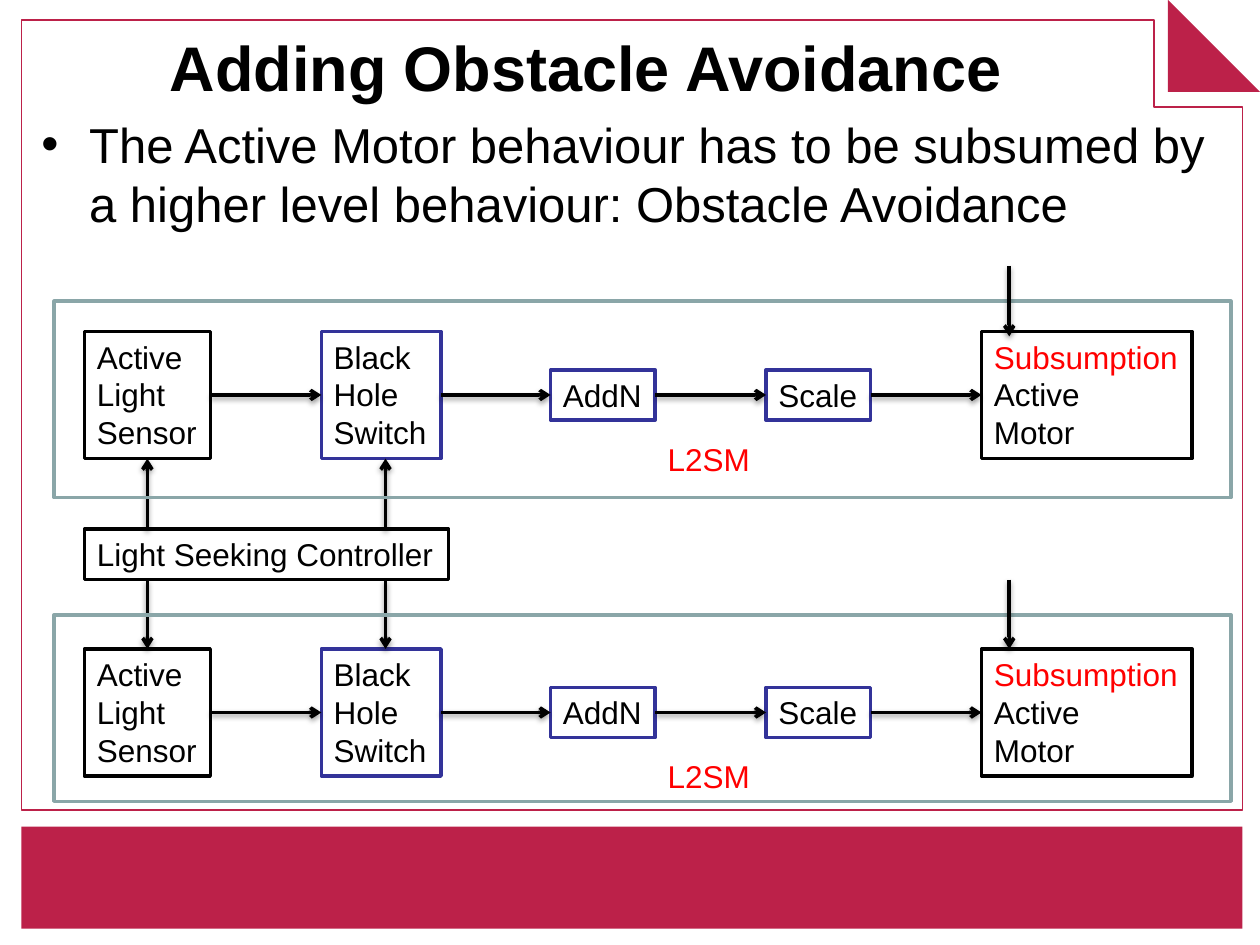
from lxml import etree
from pptx import Presentation
from pptx.dml.color import RGBColor
from pptx.enum import shapes, text
from pptx.oxml import parse_xml
from pptx.oxml.ns import nsdecls, qn
from pptx.util import Inches, Pt


class Theme:
    font = "Arial"
    title, body, label = 36, 28, 18
    thin, thick = 0.75, 2
    white, black = "FFFFFF", "000000"
    crimson, navy, grey, red = "BC2149", "333399", "8AA6A8", "FF0000"


prs = Presentation()
prs.slide_width, prs.slide_height = Inches(10), Inches(7.5)
s = prs.slides.add_slide(prs.slide_layouts[6])


def add_box(content, x, y, w, h, kind=shapes.MSO_SHAPE.RECTANGLE, fill=None, line=None,
            size=Theme.label, color=Theme.black, first_color=None, bold=False,
            align=text.PP_ALIGN.LEFT, anchor=text.MSO_ANCHOR.TOP, wrap=False):
    place = [Inches(v) for v in (x, y, w, h)]
    if fill or line:
        sp = s.shapes.add_shape(kind, *place)
        sp.shadow.inherit = False
    else:
        sp = s.shapes.add_textbox(*place)
    if fill:
        sp.fill.solid()
        sp.fill.fore_color.rgb = RGBColor.from_string(fill)
    else:
        sp.fill.background()
    if line:
        sp.line.color.rgb = RGBColor.from_string(line)
        sp.line.width = Pt(Theme.thick)
    else:
        sp.line.fill.background()
    if not content:
        return sp
    tf = sp.text_frame
    tf.word_wrap = wrap
    tf.auto_size = text.MSO_AUTO_SIZE.NONE if wrap else text.MSO_AUTO_SIZE.SHAPE_TO_FIT_TEXT
    tf.vertical_anchor = anchor
    for i, words in enumerate(content.split("\n")):
        p = tf.paragraphs[0] if i == 0 else tf.add_paragraph()
        p.alignment = align
        r = p.add_run()
        r.text = words
        r.font.name, r.font.size, r.font.bold = Theme.font, Pt(size), bold
        r.font.color.rgb = RGBColor.from_string(first_color if first_color and i == 0 else color)
    return sp


def add_arrow(x1, y1, x2, y2, start=None, end=None):
    c = s.shapes.add_connector(shapes.MSO_CONNECTOR.STRAIGHT,
                               Inches(x1), Inches(y1), Inches(x2), Inches(y2))
    if start:
        c.begin_connect(*start)
    if end:
        c.end_connect(*end)
    c.line.color.rgb = RGBColor.from_string(Theme.black)
    c.line.width = Pt(Theme.thick)
    etree.SubElement(c.line._get_or_add_ln(), qn("a:tailEnd"), type="arrow")
    c._element.spPr.append(parse_xml(
        f'<a:effectLst {nsdecls("a")}><a:outerShdw blurRad="{Pt(3.1)}" dist="{Pt(1.6)}" '
        f'dir="5400000" rotWithShape="0"><a:srgbClr val="{Theme.black}">'
        '<a:alpha val="38000"/></a:srgbClr></a:outerShdw></a:effectLst>'))


outline = [(0.17, 0.16), (9.16, 0.16), (9.16, 0.85), (9.86, 0.85), (9.86, 6.43), (0.17, 6.43)]
points = [(Inches(x), Inches(y)) for x, y in outline]
fb = s.shapes.build_freeform(*points[0])
fb.add_line_segments(points[1:], close=True)
page = fb.convert_to_shape()
page.shadow.inherit = False
page.fill.solid()
page.fill.fore_color.rgb = RGBColor.from_string(Theme.white)
page.line.color.rgb = RGBColor.from_string(Theme.crimson)
page.line.width = Pt(Theme.thin)

add_box("", 9.27, 0, 0.73, 0.73, kind=shapes.MSO_SHAPE.RIGHT_TRIANGLE, fill=Theme.crimson)
add_box("", 0.17, 6.56, 9.69, 0.81, fill=Theme.crimson)

add_box("Adding Obstacle Avoidance", 0.23, 0.21, 8.84, 0.63, size=Theme.title, bold=True,
        align=text.PP_ALIGN.CENTER, anchor=text.MSO_ANCHOR.MIDDLE, wrap=True)
body = add_box("The Active Motor behaviour has to be subsumed by a higher level behaviour: "
               "Obstacle Avoidance", 0.23, 0.86, 9.53, 1.19, size=Theme.body, wrap=True)
pPr = body.text_frame.paragraphs[0]._p.get_or_add_pPr()
pPr.set("marL", str(Inches(0.38)))
pPr.set("indent", str(-Inches(0.38)))
etree.SubElement(pPr, qn("a:buFont"), typeface=Theme.font)
etree.SubElement(pPr, qn("a:buChar"), char="•")

stages = [
    ("Active\nLight\nSensor", 0.67, 1, 1.01, Theme.black, None),
    ("Black\nHole\nSwitch", 2.55, 0.95, 1.01, Theme.navy, None),
    ("AddN", 4.37, 0.83, 0.4, Theme.navy, None),
    ("Scale", 6.08, 0.83, 0.4, Theme.navy, None),
    ("Subsumption\nActive\nMotor", 7.79, 1.67, 1.01, Theme.black, Theme.red),
]
row_tops = [2.63, 5.15]
row_height = 1.01
sensors = []
for top in row_tops:
    middle = top + row_height / 2
    row = [add_box(label, x, middle - h / 2, w, h, fill=Theme.white, line=line, first_color=first)
           for label, x, w, h, line, first in stages]
    for i in range(len(row) - 1):
        add_arrow(stages[i][1] + stages[i][2], middle, stages[i + 1][1], middle,
                  start=(row[i], 3), end=(row[i + 1], 1))
    sensors.append(row[0])

add_box("Light Seeking Controller", 0.67, 4.2, 2.89, 0.4, fill=Theme.white, line=Theme.black)
for x in (1.17, 3.06):
    for sensor, y1, y2, side in ((sensors[0], 4.2, 3.64, 2), (sensors[1], 4.6, 5.15, 0)):
        add_arrow(x, y1, x, y2, end=(sensor, side) if x == 1.17 else None)

for top, frame_top, frame_height in zip(row_tops, (2.39, 4.88), (1.56, 1.48)):
    add_box("", 0.43, frame_top, 9.34, frame_height, line=Theme.grey)
    add_box("L2SM", 5.2, top + 0.81, 0.86, 0.4, color=Theme.red)

for y1, y2 in ((2.11, 2.67), (4.6, 5.15)):
    add_arrow(8.01, y1, 8.01, y2)

prs.save("out.pptx")
